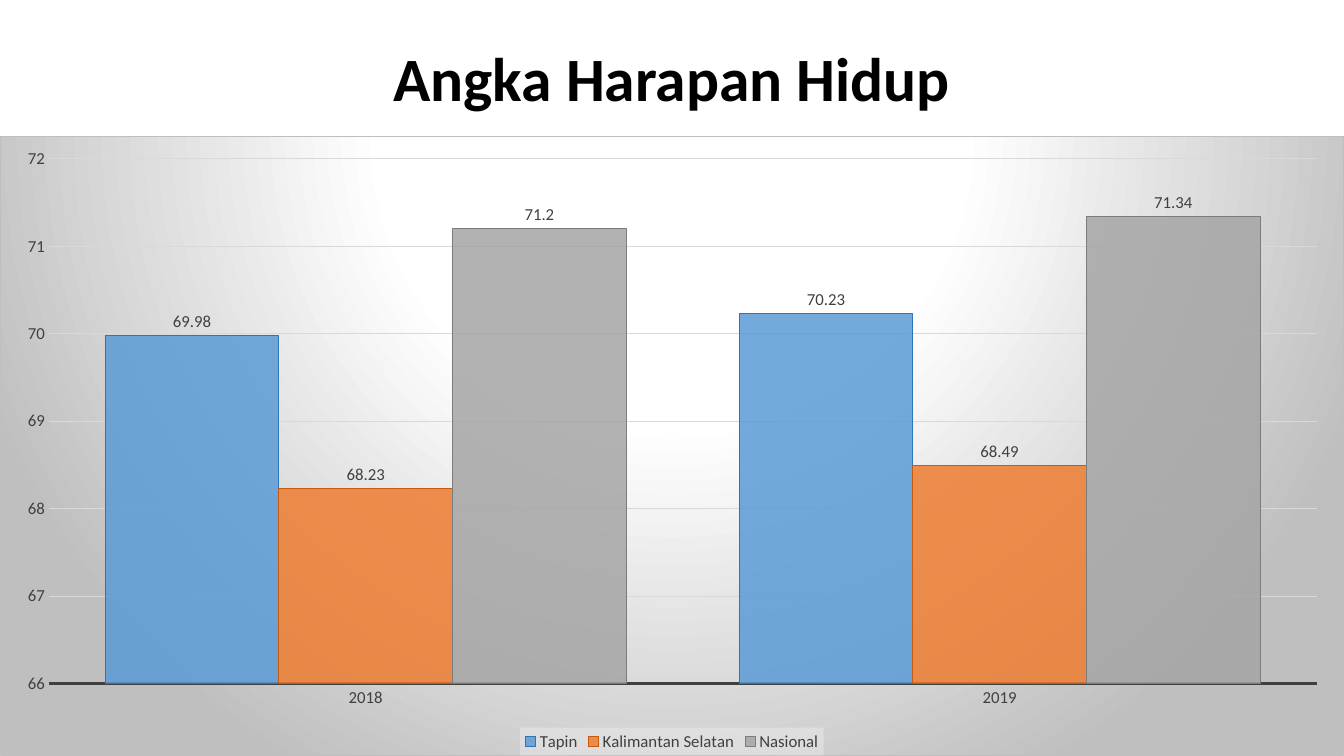
from lxml import etree
from pptx import Presentation
from pptx.chart.data import CategoryChartData
from pptx.dml.color import RGBColor
from pptx.enum.chart import XL_CHART_TYPE, XL_LABEL_POSITION, XL_LEGEND_POSITION, XL_TICK_MARK
from pptx.enum.text import MSO_ANCHOR, PP_ALIGN
from pptx.oxml import parse_xml
from pptx.oxml.ns import nsdecls, qn
from pptx.util import Pt

COLUMNS = XL_CHART_TYPE.COLUMN_CLUSTERED
OUTSIDE_END = XL_LABEL_POSITION.OUTSIDE_END
BOTTOM = XL_LEGEND_POSITION.BOTTOM
NO_TICK = XL_TICK_MARK.NONE
MIDDLE = MSO_ANCHOR.MIDDLE
CENTER = PP_ALIGN.CENTER

FONT = "Calibri"
COLORS = {
    "title": "000000",
    "label": "404040",
    "grid": "D9D9D9",
    "light": "FFFFFF",
    "shade": "BFBFBF",
    "legend": "F2F2F2",
}
YEARS = ["2018", "2019"]
# Region, values, fill, outline
REGIONS = [
    ("Tapin", (69.98, 70.23), "5B9BD5", "2E75B6"),
    ("Kalimantan Selatan", (68.23, 68.49), "ED7D31", "C55A11"),
    ("Nasional", (71.2, 71.34), "A5A5A5", "7C7C7C"),
]


def set_values(target, values):
    for name, value in values.items():
        setattr(target, name, value)


def style_font(font, size, color, bold=False):
    set_values(font, {"name": FONT, "size": Pt(size), "bold": bold})
    font.color.rgb = RGBColor.from_string(color)


def style_line(line, color, width):
    line.color.rgb = RGBColor.from_string(color)
    line.width = Pt(width)


def add_title(page, text):
    box = page.shapes.add_textbox(Pt(66), Pt(29), Pt(828), Pt(58))
    set_values(box.text_frame, {"word_wrap": True, "vertical_anchor": MIDDLE})
    para = box.text_frame.paragraphs[0]
    set_values(para, {"alignment": CENTER, "line_spacing": 0.9})
    span = para.add_run()
    span.text = text
    style_font(span.font, 44, COLORS["title"], bold=True)


def style_axes(chart):
    years, scale = chart.category_axis, chart.value_axis
    for axis in (years, scale):
        set_values(axis, {"major_tick_mark": NO_TICK, "minor_tick_mark": NO_TICK})
        style_font(axis.tick_labels.font, 12, COLORS["label"])
    style_line(years.format.line, COLORS["label"], 1.5)
    set_values(scale, {"minimum_scale": 66, "maximum_scale": 72, "major_unit": 1})
    scale.format.line.fill.background()
    style_line(scale.major_gridlines.format.line, COLORS["grid"], 0.75)


def style_columns(chart):
    plot = chart.plots[0]
    set_values(plot, {"gap_width": 65, "overlap": 0, "vary_by_categories": False})
    for series, (_, _, fill, outline) in zip(plot.series, REGIONS):
        series.format.fill.solid()
        series.format.fill.fore_color.rgb = RGBColor.from_string(fill)
        style_line(series.format.line, outline, 0.75)
        labels = series.data_labels
        set_values(labels, {"show_value": True, "position": OUTSIDE_END})
        style_font(labels.font, 12, COLORS["label"])
    # Column transparency
    for color in chart.element.xpath(".//c:ser/c:spPr/a:solidFill/a:srgbClr"):
        etree.SubElement(color, qn("a:alpha")).set("val", "85000")


def style_legend(chart):
    chart.has_legend = True
    legend = chart.legend
    set_values(legend, {"position": BOTTOM, "include_in_layout": False})
    style_font(legend.font, 12, COLORS["label"])
    panel = parse_xml(
        f'<c:spPr {nsdecls("c", "a")}><a:solidFill><a:srgbClr val="{COLORS["legend"]}">'
        '<a:alpha val="39000"/></a:srgbClr></a:solidFill></c:spPr>'
    )
    chart.element.xpath(".//c:legend/c:overlay")[0].addnext(panel)


def place_plot(chart, **fractions):
    modes = '<c:layoutTarget val="inner"/><c:xMode val="edge"/><c:yMode val="edge"/>'
    sizes = "".join(f'<c:{name} val="{value}"/>' for name, value in fractions.items())
    layout = parse_xml(
        f'<c:layout {nsdecls("c")}><c:manualLayout>{modes}{sizes}</c:manualLayout></c:layout>'
    )
    area = chart.element.xpath(".//c:plotArea")[0]
    for old in area.findall(qn("c:layout")):
        area.remove(old)
    area.insert(0, layout)


def shade_background(chart):
    stops = [(0, "light"), (39, "light"), (100, "shade")]
    stop_xml = "".join(
        f'<a:gs pos="{place * 1000}"><a:srgbClr val="{COLORS[name]}"/></a:gs>'
        for place, name in stops
    )
    backdrop = parse_xml(
        f'<c:spPr {nsdecls("c", "a")}><a:gradFill><a:gsLst>{stop_xml}</a:gsLst>'
        '<a:path path="circle"><a:fillToRect l="50000" t="-80000" r="50000" b="180000"/>'
        f'</a:path></a:gradFill><a:ln w="{Pt(0.75)}"><a:solidFill>'
        f'<a:srgbClr val="{COLORS["shade"]}"/></a:solidFill></a:ln></c:spPr>'
    )
    chart.element.find(qn("c:chart")).addnext(backdrop)


def add_life_expectancy_chart(page):
    data = CategoryChartData()
    data.categories = YEARS
    for name, values, _, _ in REGIONS:
        data.add_series(name, values)
    frame = page.shapes.add_chart(COLUMNS, Pt(0), Pt(97.2), Pt(960), Pt(442.8), data)
    chart = frame.chart
    chart.has_title = False
    style_font(chart.font, 10, COLORS["title"])
    style_axes(chart)
    style_columns(chart)
    style_legend(chart)
    place_plot(chart, x=0.036, y=0.036, w=0.944, h=0.848)
    shade_background(chart)


def main():
    deck = Presentation()
    set_values(deck, {"slide_width": Pt(960), "slide_height": Pt(540)})
    page = deck.slides.add_slide(deck.slide_layouts[6])
    add_title(page, "Angka Harapan Hidup")
    add_life_expectancy_chart(page)
    deck.save("out.pptx")


if __name__ == "__main__":
    main()
